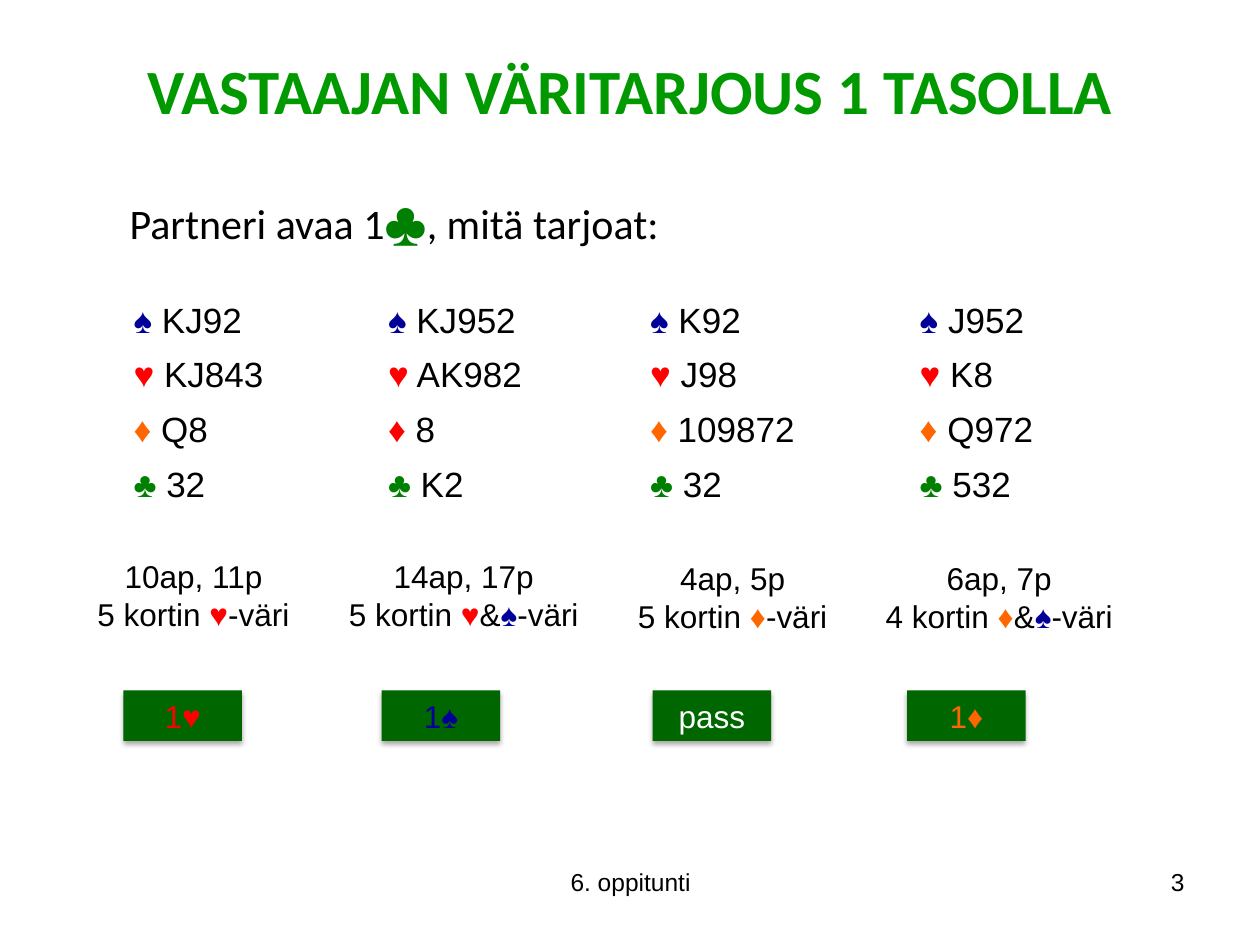
from dataclasses import dataclass
from itertools import groupby

from lxml import etree
from pptx import Presentation
from pptx import util as u
from pptx.dml.color import RGBColor
from pptx.enum import shapes, text
from pptx.oxml.ns import qn

COLORS = {
    "title": "009900", "text": "000000", "bid": "006600", "pass": "FFFFFF",
    "♠": "000099", "♥": "FF0000", "♦": "FF6600", "♣": "008000",
}
SUITS = "♠♥♦♣"
GRID_COLUMNS, GRID_ROWS = 100, 75
LEFT, CENTER = text.PP_ALIGN.LEFT, text.PP_ALIGN.CENTER
RIGHT, JUSTIFY = text.PP_ALIGN.RIGHT, text.PP_ALIGN.JUSTIFY


@dataclass(frozen=True)
class Area:
    """A place on the slide, in grid columns and rows."""
    column: float
    row: float
    columns: float
    rows: float


@dataclass(frozen=True)
class Style:
    size: int
    font: str = "Arial"
    color: str = COLORS["text"]
    align: text.PP_ALIGN = CENTER
    bold: bool = False


@dataclass(frozen=True)
class Hand:
    width: float
    cards: tuple[str, str, str, str]
    note: tuple[str, str]
    note_area: Area
    bid: str
    bid_column: float
    bid_color: str
    diamond: str = COLORS["♦"]


HANDS = (
    Hand(20.2, ("KJ92", "KJ843", "Q8", "32"), ("10ap, 11p", "5 kortin ♥-väri"),
         Area(5.9, 43.7, 18.9, 7.1), "1♥", 9.8, COLORS["♥"]),
    Hand(20.8, ("KJ952", "AK982", "8", "K2"), ("14ap, 17p", "5 kortin ♥&♠-väri"),
         Area(26.4, 43.7, 20.8, 7.1), "1♠", 30.3, COLORS["♠"], diamond=COLORS["♥"]),
    Hand(21.4, ("K92", "J98", "109872", "32"), ("4ap, 5p", "5 kortin ♦-väri"),
         Area(49, 43.9, 18.3, 7.1), "pass", 51.8, COLORS["pass"]),
    Hand(21.1, ("J952", "K8", "Q972", "532"), ("6ap, 7p", "4 kortin ♦&♠-väri"),
         Area(68.9, 43.9, 20.8, 7.1), "1♦", 72, COLORS["♦"]),
)

deck = Presentation()
deck.slide_width, deck.slide_height = u.Inches(10), u.Inches(7.5)
page = deck.slides.add_slide(deck.slide_layouts[6])


def across(columns: float) -> int:
    return round(deck.slide_width * columns / GRID_COLUMNS)


def down(rows: float) -> int:
    return round(deck.slide_height * rows / GRID_ROWS)


def place(area: Area) -> tuple[int, int, int, int]:
    return across(area.column), down(area.row), across(area.columns), down(area.rows)


def write(frame, lines: tuple[str, ...], style: Style, suit_colors: dict[str, str] = COLORS) -> None:
    """Write one paragraph per line, giving each suit symbol its own colour."""
    for index, line in enumerate(lines):
        para = frame.add_paragraph() if index else frame.paragraphs[0]
        para.alignment = style.align
        for suit, letters in groupby(line, lambda letter: letter if letter in SUITS else ""):
            span = para.add_run()
            span.text = "".join(letters)
            span.font.name = style.font
            span.font.size = u.Pt(style.size)
            span.font.bold = style.bold
            color = suit_colors[suit] if suit else style.color
            span.font.color.rgb = RGBColor.from_string(color)


def add_text(area: Area, lines: tuple[str, ...], style: Style) -> None:
    box = page.shapes.add_textbox(*place(area))
    box.text_frame.word_wrap = True
    write(box.text_frame, lines, style)


def add_soft_shadow(box) -> None:
    effects = etree.SubElement(box._element.spPr, qn("a:effectLst"))
    shadow = etree.SubElement(effects, qn("a:outerShdw"), blurRad=str(u.Pt(3.1)),
                              dist=str(u.Pt(1.8)), dir="5400000", rotWithShape="0")
    color = etree.SubElement(shadow, qn("a:srgbClr"), val="000000")
    etree.SubElement(color, qn("a:alpha"), val="35000")


def add_bid(hand: Hand) -> None:
    area = Area(hand.bid_column, 54.8, 9.4, 4)
    box = page.shapes.add_shape(shapes.MSO_SHAPE.RECTANGLE, *place(area))
    box.fill.solid()
    box.fill.fore_color.rgb = RGBColor.from_string(COLORS["bid"])
    box.line.fill.background()
    add_soft_shadow(box)
    write(box.text_frame, (hand.bid,), Style(18, color=hand.bid_color))


def add_hands_table(area: Area) -> None:
    table = page.shapes.add_table(len(SUITS), len(HANDS), *place(area)).table
    table.first_row = table.horz_banding = False
    for row in table.rows:
        row.height = down(area.rows / len(SUITS))
    for column, hand in enumerate(HANDS):
        table.columns[column].width = across(hand.width)
        suit_colors = COLORS | {"♦": hand.diamond}
        for row, (suit, cards) in enumerate(zip(SUITS, hand.cards)):
            cell = table.cell(row, column)
            cell.fill.background()
            cell.vertical_anchor = text.MSO_ANCHOR.MIDDLE
            write(cell.text_frame, (f"{suit} {cards}",), Style(20, align=JUSTIFY), suit_colors)


add_text(Area(5.9, 3.6, 88.2, 7.1), ("VASTAAJAN VÄRITARJOUS 1 TASOLLA",),
         Style(36, "Calibri", COLORS["title"], bold=True))
add_hands_table(Area(9.6, 23.3, sum(hand.width for hand in HANDS), 17.3))
add_text(Area(9.3, 15.2, 48.8, 5), ("Partneri avaa 1♣, mitä tarjoat:",),
         Style(24, "Calibri", align=LEFT))
for hand in HANDS:
    add_bid(hand)
    add_text(hand.note_area, hand.note, Style(18))
add_text(Area(34.2, 68.3, 31.7, 5.2), ("6. oppitunti",), Style(14))
add_text(Area(71.7, 68.3, 23.3, 5.2), ("3",), Style(14, align=RIGHT))

deck.save("out.pptx")
